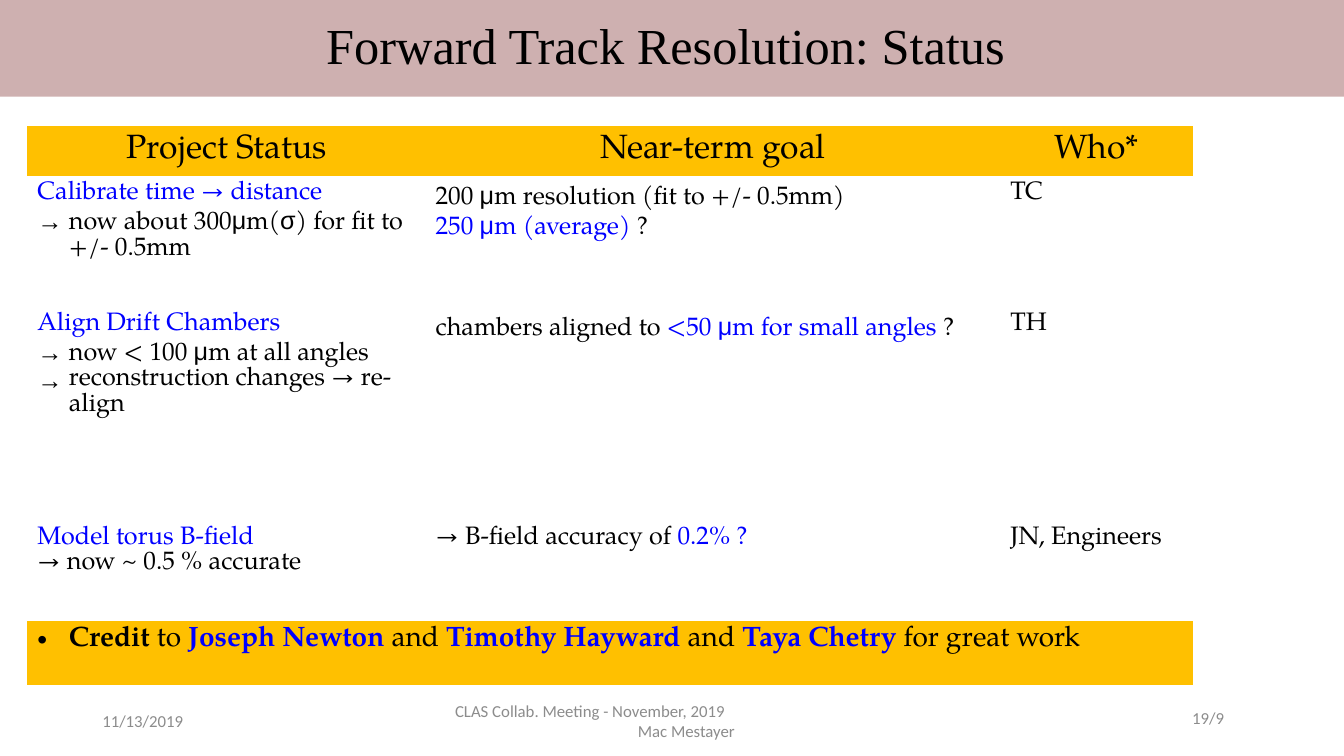
from dataclasses import dataclass
from itertools import groupby

from lxml.etree import SubElement
from pptx import Presentation
from pptx.dml.color import RGBColor
from pptx.enum.shapes import MSO_SHAPE as Shape
from pptx.enum.text import MSO_ANCHOR as Anchor, PP_ALIGN as Align
from pptx.oxml.ns import qn
from pptx.util import Pt

BLACK, BLUE, GREY = "000000", "0000FF", "8C8C8C"
GOLD, ROSE = "FFC000", "CEB0B0"
BODY_FONT, GREEK_FONT, FOOTER_FONT = "TeX Gyre Pagella", "Arial", "Calibri"
NO_GRID_STYLE = "{2D5ABB26-0587-4C30-8999-92F81FD0307C}"
BULLET_INDENT = 22.5
TABLE_LEFT = 19.5


@dataclass
class Span:
    text: str
    color: str = BLACK
    bold: bool = False


@dataclass
class Line:
    spans: list[Span]
    bullet: str = ""
    size: float = 18
    align: Align = Align.LEFT


@dataclass
class Footer:
    lines: list[str]
    left: float
    top: float
    width: float
    align: Align = Align.LEFT
    last_indent: float = 0


def rgb(color: str) -> RGBColor:
    return RGBColor.from_string(color)


def style_font(font, name: str, size: float, color: str, bold: bool = False) -> None:
    font.name, font.size, font.bold = name, Pt(size), bold
    font.color.rgb = rgb(color)


def is_greek(letter: str) -> bool:
    return "α" <= letter <= "ω"


def indent(para, left: float, first: float = 0):
    properties = para._p.get_or_add_pPr()
    properties.set("marL", str(Pt(left)))
    properties.set("indent", str(Pt(first)))
    return properties


def write_line(para, line: Line) -> None:
    para.alignment = line.align
    if line.bullet:
        properties = indent(para, BULLET_INDENT, -BULLET_INDENT)
        SubElement(properties, qn("a:buFont")).set("typeface", GREEK_FONT)
        SubElement(properties, qn("a:buChar")).set("char", line.bullet)
    for span in line.spans:
        # Greek letters take their own font
        for greek, letters in groupby(span.text, is_greek):
            run = para.add_run()
            run.text = "".join(letters)
            font_name = GREEK_FONT if greek else BODY_FONT
            style_font(run.font, font_name, line.size, span.color, span.bold)


def add_table(page, top: float, widths: list[float], heights: list[float],
              rows: list[list[list[Line]]], gold_rows: set[int]):
    frame = page.shapes.add_table(len(rows), len(widths), Pt(TABLE_LEFT), Pt(top),
                                  Pt(sum(widths)), Pt(sum(heights)))
    table = frame.table
    table.first_row = table.horz_banding = False
    table._tbl.tblPr.find(qn("a:tableStyleId")).text = NO_GRID_STYLE
    for column, width in zip(table.columns, widths):
        column.width = Pt(width)
    for row, height in zip(table.rows, heights):
        row.height = Pt(height)
    for row_index, row_cells in enumerate(rows):
        for column_index, lines in enumerate(row_cells):
            cell = table.cell(row_index, column_index)
            if row_index in gold_rows:
                cell.fill.solid()
                cell.fill.fore_color.rgb = rgb(GOLD)
            else:
                cell.fill.background()
            for line_index, line in enumerate(lines):
                frame_text = cell.text_frame
                para = frame_text.add_paragraph() if line_index else frame_text.paragraphs[0]
                write_line(para, line)
    return table


def add_title(page, text: str) -> None:
    band = page.shapes.add_shape(Shape.RECTANGLE, 0, 0, Pt(960), Pt(69))
    band.shadow.inherit = False
    band.fill.solid()
    band.fill.fore_color.rgb = rgb(ROSE)
    band.line.fill.background()
    band.text_frame.text = text
    band.text_frame.vertical_anchor = Anchor.MIDDLE
    para = band.text_frame.paragraphs[0]
    para.alignment, para.line_spacing = Align.CENTER, 0.9
    style_font(para.runs[0].font, "Times New Roman", 36, BLACK)


def add_footer(page, footer: Footer) -> None:
    box = page.shapes.add_textbox(Pt(footer.left), Pt(footer.top), Pt(footer.width), Pt(28.75))
    box.text_frame.word_wrap = True
    box.text_frame.vertical_anchor = Anchor.MIDDLE
    box.text_frame.text = "\n".join(footer.lines)
    for para in box.text_frame.paragraphs:
        para.alignment = footer.align
        style_font(para.runs[0].font, FOOTER_FONT, 12, GREY)
    if footer.last_indent:
        indent(box.text_frame.paragraphs[-1], footer.last_indent)


def plain(text: str, bullet: str = "") -> Line:
    return Line([Span(text)], bullet)


def topic(text: str) -> Line:
    return Line([Span(text, BLUE)])


def heading(text: str) -> list[Line]:
    return [Line([Span(text)], size=24, align=Align.CENTER)]


# Wording of the tables
STATUS_ROWS = [
    [heading("Project Status"), heading("Near-term goal"), heading("Who*")],
    [
        [topic("Calibrate time → distance"),
         plain("now about 300μm(σ) for fit to +/- 0.5mm", "→")],
        [plain("200 μm resolution (fit to +/- 0.5mm)"),
         Line([Span("250 μm (average) ", BLUE), Span("?")])],
        [plain("TC")],
    ],
    [
        [topic("Align Drift Chambers"),
         plain("now < 100 μm at all angles", "→"),
         plain("reconstruction changes → re-align", "→")],
        [Line([Span("chambers aligned to "),
               Span("<50 μm for small angles ", BLUE), Span("?")])],
        [plain("TH")],
    ],
    [
        [topic("Model torus B-field"), plain("→ now ~ 0.5 % accurate")],
        [Line([Span("→ B-field accuracy of "), Span("0.2% ?", BLUE)])],
        [plain("JN, Engineers")],
    ],
]
CREDIT = Line([
    Span("Credit", bold=True), Span(" to "),
    Span("Joseph Newton ", BLUE, True), Span("and "),
    Span("Timothy Hayward ", BLUE, True), Span("and "),
    Span("Taya Chetry ", BLUE, True), Span("for great work"),
], bullet="•", size=20)
FOOTERS = [
    Footer(["11/13/2019"], 66, 500.5, 216),
    Footer(["CLAS Collab. Meeting - November, 2019", "Mac Mestayer"],
           318, 500.5, 324, last_indent=130.5),
    Footer(["19/9"], 665.5, 498.5, 216, Align.RIGHT),
]


def main() -> None:
    deck = Presentation()
    deck.slide_width, deck.slide_height = Pt(960), Pt(540)
    page = deck.slides.add_slide(deck.slide_layouts[6])

    add_title(page, "Forward Track Resolution: Status ")
    for footer in FOOTERS:
        add_footer(page, footer)

    # Status table, then the credit bar
    widths = [284.5, 410.5, 137.5]
    status = add_table(page, 90, widths, [33.75, 93.5, 152.75, 69], STATUS_ROWS, {0})
    for cell in status.rows[0].cells:
        cell.vertical_anchor = Anchor.MIDDLE
    add_table(page, 443.5, [sum(widths)], [45.5], [[[CREDIT]]], {0})

    deck.save("out.pptx")


if __name__ == "__main__":
    main()
